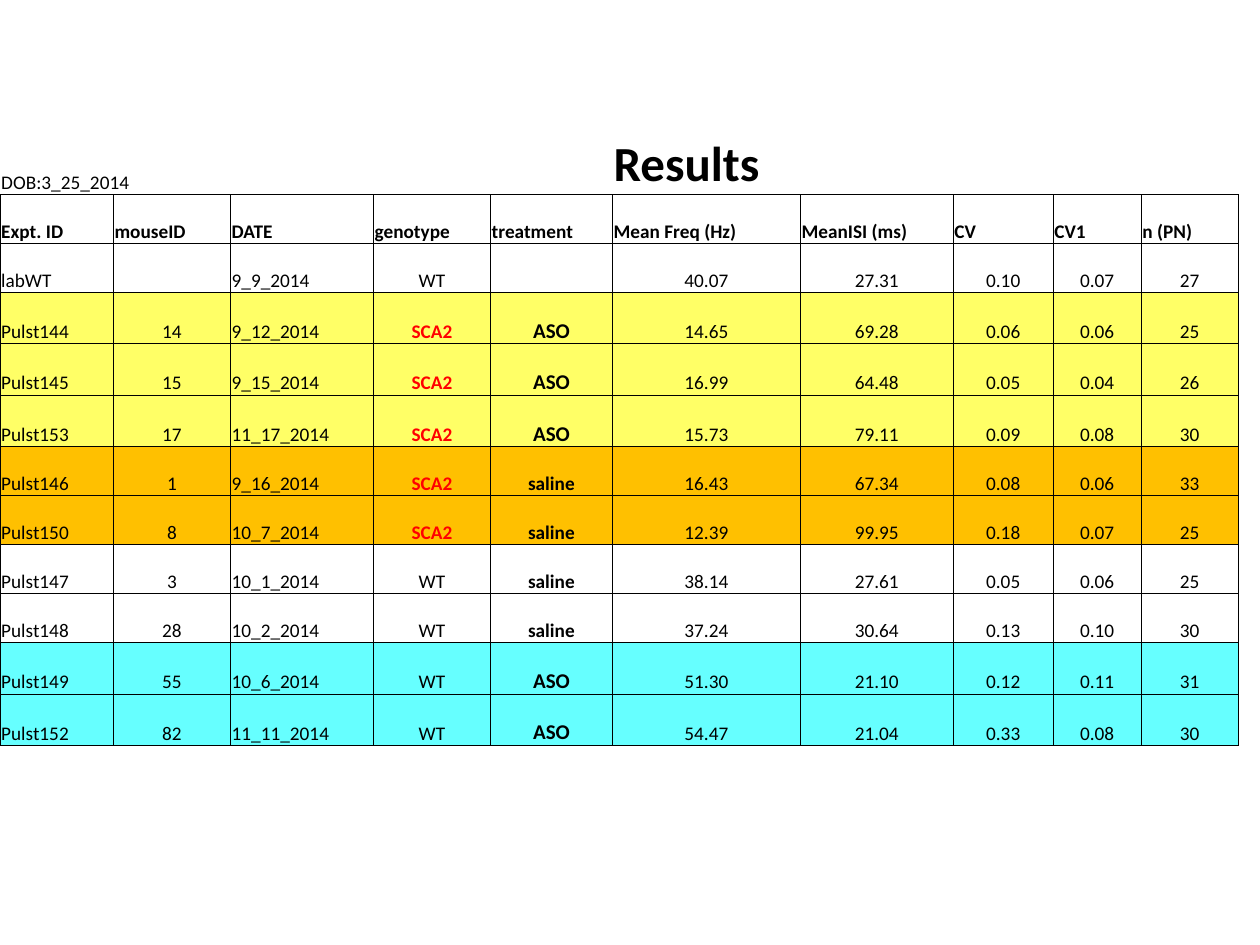
from lxml import etree
from pptx import Presentation
from pptx.dml.color import RGBColor
from pptx.enum.text import MSO_ANCHOR, PP_ALIGN
from pptx.oxml.ns import qn
from pptx.util import Pt

BOTTOM = MSO_ANCHOR.BOTTOM
LEFT, CENTER = PP_ALIGN.LEFT, PP_ALIGN.CENTER
COLORS = {"text": "000000", "mutant": "FF0000", "yellow": "FFFF66",
          "orange": "FFC000", "cyan": "66FFFF"}
NO_STYLE = "{2D5ABB26-0587-4C30-8999-92F81FD0307C}"
COLUMN_WIDTHS = [64.8, 66.9, 81.7, 66.9, 69.7, 107.4, 87.4, 57.1, 50.3, 55.4]
TITLE_HEIGHT, ROW_HEIGHT, ASO_ROW_HEIGHT = 39.1, 28, 29.4
DATE_COLUMN, GENOTYPE_COLUMN, TREATMENT_COLUMN, TITLE_COLUMN = 2, 3, 4, 5
HEADERS = ["Expt. ID", "mouseID", "DATE", "genotype", "treatment",
           "Mean Freq (Hz)", "MeanISI (ms)", "CV", "CV1", "n (PN)"]
EXPERIMENTS = [
    ["labWT", "", "9_9_2014", "WT", "", "40.07", "27.31", "0.10", "0.07", "27"],
    ["Pulst144", "14", "9_12_2014", "SCA2", "ASO", "14.65", "69.28", "0.06", "0.06", "25"],
    ["Pulst145", "15", "9_15_2014", "SCA2", "ASO", "16.99", "64.48", "0.05", "0.04", "26"],
    ["Pulst153", "17", "11_17_2014", "SCA2", "ASO", "15.73", "79.11", "0.09", "0.08", "30"],
    ["Pulst146", "1", "9_16_2014", "SCA2", "saline", "16.43", "67.34", "0.08", "0.06", "33"],
    ["Pulst150", "8", "10_7_2014", "SCA2", "saline", "12.39", "99.95", "0.18", "0.07", "25"],
    ["Pulst147", "3", "10_1_2014", "WT", "saline", "38.14", "27.61", "0.05", "0.06", "25"],
    ["Pulst148", "28", "10_2_2014", "WT", "saline", "37.24", "30.64", "0.13", "0.10", "30"],
    ["Pulst149", "55", "10_6_2014", "WT", "ASO", "51.30", "21.10", "0.12", "0.11", "31"],
    ["Pulst152", "82", "11_11_2014", "WT", "ASO", "54.47", "21.04", "0.33", "0.08", "30"],
]
GROUP_FILLS = {("SCA2", "ASO"): "yellow", ("SCA2", "saline"): "orange",
               ("WT", "ASO"): "cyan"}


class SlideBuilder:
    """Draw tables in one style on the current slide."""

    def __init__(self, slide, font_name="Calibri", font_size=11):
        self.slide = slide
        self.font_name = font_name
        self.font_size = font_size

    def table(self, left, top, widths, heights):
        frame = self.slide.shapes.add_table(
            len(heights), len(widths), Pt(left), Pt(top), Pt(sum(widths)), Pt(sum(heights)))
        table = frame.table
        table.first_row = table.horz_banding = False
        table._tbl.tblPr.find(qn("a:tableStyleId")).text = NO_STYLE
        for column, width in zip(table.columns, widths):
            column.width = Pt(width)
        for row, height in zip(table.rows, heights):
            row.height = Pt(height)
        return table

    def borders(self, cell, sides):
        properties = cell._tc.get_or_add_tcPr()
        for side in sides:
            line = etree.SubElement(properties, qn(f"a:ln{side}"), w=str(Pt(0.5)))
            fill = etree.SubElement(line, qn("a:solidFill"))
            etree.SubElement(fill, qn("a:srgbClr"), val=COLORS["text"])

    def cell(self, cell, text="", sides="LRTB", fill=None, size=None,
             bold=False, color="text", align=LEFT):
        self.borders(cell, sides)
        if fill:
            cell.fill.solid()
            cell.fill.fore_color.rgb = RGBColor.from_string(COLORS[fill])
        else:
            cell.fill.background()
        cell.vertical_anchor = BOTTOM
        cell.margin_left = cell.margin_right = cell.margin_top = Pt(0.7)
        cell.margin_bottom = 0
        cell.text = text
        paragraph = cell.text_frame.paragraphs[0]
        paragraph.alignment = align
        font = paragraph.font
        font.name = self.font_name
        font.size = Pt(size or self.font_size)
        font.bold = bold
        font.color.rgb = RGBColor.from_string(COLORS[color])


def main():
    presentation = Presentation()
    presentation.slide_width, presentation.slide_height = Pt(720), Pt(540)
    slide = presentation.slides.add_slide(presentation.slide_layouts[6])
    builder = SlideBuilder(slide)

    heights = [TITLE_HEIGHT, ROW_HEIGHT]
    heights += [ASO_ROW_HEIGHT if experiment[TREATMENT_COLUMN] == "ASO" else ROW_HEIGHT
                for experiment in EXPERIMENTS]
    table = builder.table(0, 72, COLUMN_WIDTHS, heights)

    table.cell(0, 0).merge(table.cell(0, 1))
    titles = {0: {"text": "DOB:3_25_2014"},
              TITLE_COLUMN: {"text": "Results", "size": 28, "bold": True}}
    for column, header in enumerate(HEADERS):
        builder.cell(table.cell(0, column), sides="B", **titles.get(column, {}))
        builder.cell(table.cell(1, column), header, bold=True)

    for row, experiment in enumerate(EXPERIMENTS, start=2):
        group = (experiment[GENOTYPE_COLUMN], experiment[TREATMENT_COLUMN])
        for column, text in enumerate(experiment):
            mutant = text == "SCA2"
            builder.cell(
                table.cell(row, column), text,
                fill=GROUP_FILLS.get(group),
                size=12 if text == "ASO" else None,
                bold=mutant or column == TREATMENT_COLUMN,
                color="mutant" if mutant else "text",
                align=LEFT if column in (0, DATE_COLUMN) else CENTER)

    presentation.save("out.pptx")


if __name__ == "__main__":
    main()
